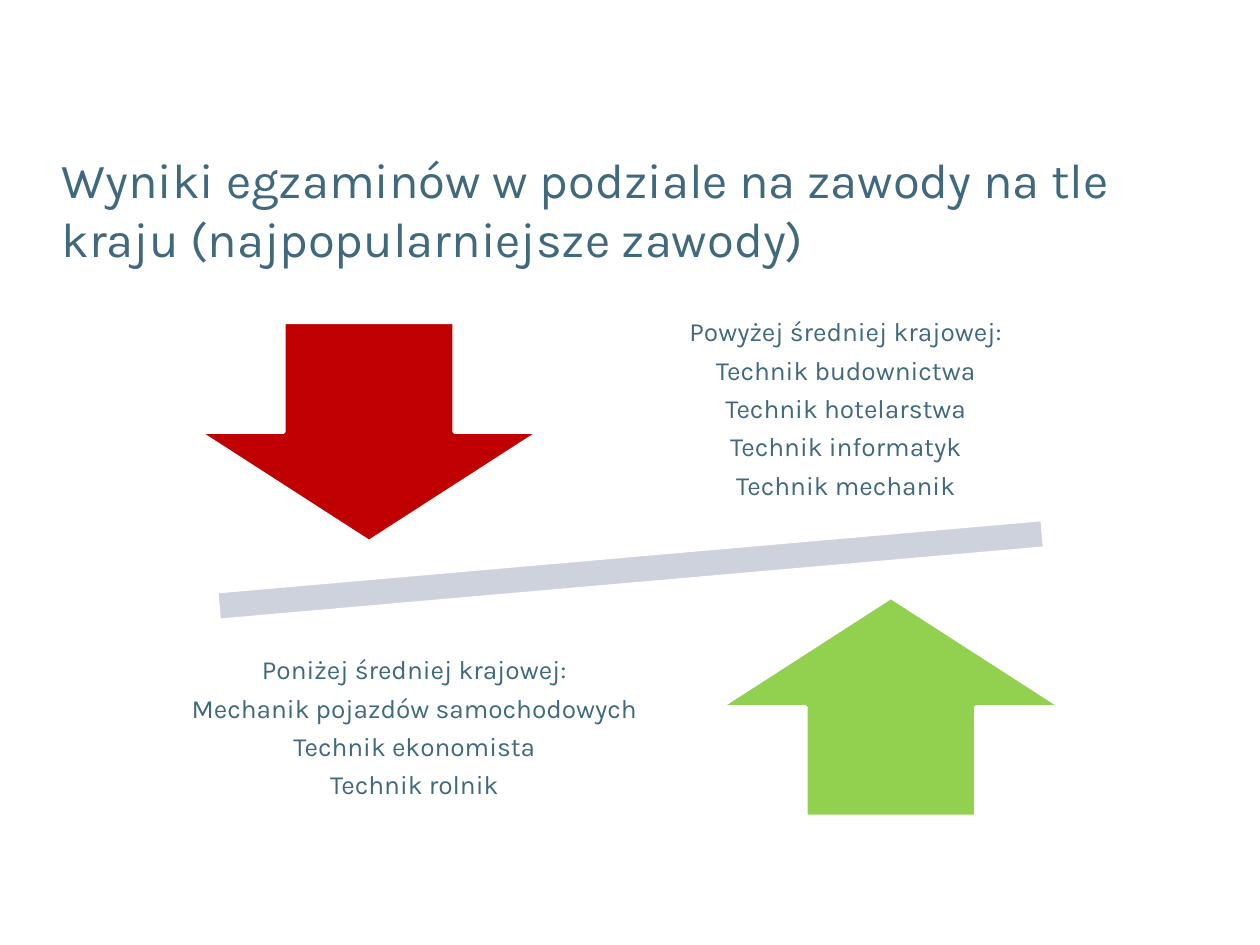
import pptx
import pptx.util
import pptx.dml.color
import pptx.enum.shapes
import pptx.enum.text

Cm, Pt = pptx.util.Cm, pptx.util.Pt
Shape = pptx.enum.shapes.MSO_SHAPE
Align = pptx.enum.text.PP_ALIGN
Anchor = pptx.enum.text.MSO_ANCHOR

COLORS = {"text": "40697D", "bar": "CED2DC", "below": "C00000",
          "above": "92D050", "outline": "FFFFFF"}
FONT = "Karla"
TITLE = "Wyniki egzaminów w podziale na zawody na tle kraju (najpopularniejsze zawody)"
TITLE_PLACE = (0.99, 2.97, 22.94, 2.54)
SHAPES = [
    (Shape.MATH_MINUS, "bar", (1.35, 10.26, 22.73, 2.46), 355),
    (Shape.DOWN_ARROW, "below", (4.01, 6.5, 6.86, 4.42), 0),
    (Shape.UP_ARROW, "above", (14.53, 12.04, 6.86, 4.42), 0),
]
LISTS = [
    ((13.39, 5.94, 7.32, 4.65),
     ["Powyżej średniej krajowej:", "Technik budownictwa", "Technik hotelarstwa",
      "Technik informatyk", "Technik mechanik"]),
    ((2.82, 12.37, 11.07, 4.65),
     ["Poniżej średniej krajowej:", "Mechanik pojazdów samochodowych",
      "Technik ekonomista", "Technik rolnik"]),
]
PARA_FORMAT = {"alignment": Align.CENTER, "line_spacing": 0.9,
               "space_before": Pt(0), "space_after": Pt(5.7)}
TITLE_FORMAT = {"alignment": Align.LEFT, "space_before": Pt(0)}
INSET = Cm(0.3)
LIST_FRAME = {"word_wrap": True, "vertical_anchor": Anchor.MIDDLE,
              "margin_left": INSET, "margin_right": INSET,
              "margin_top": INSET, "margin_bottom": INSET}
TITLE_FRAME = {"word_wrap": True, "vertical_anchor": Anchor.BOTTOM,
               "auto_size": pptx.enum.text.MSO_AUTO_SIZE.NONE}


def color(name):
    return pptx.dml.color.RGBColor.from_string(COLORS[name])


def apply(target, values):
    for name, value in values.items():
        setattr(target, name, value)


def place(box, position):
    apply(box, dict(zip(("left", "top", "width", "height"), map(Cm, position))))


def write(box, lines, size, frame_format, para_format):
    frame = box.text_frame
    apply(frame, frame_format)
    for index, line in enumerate(lines):
        para = frame.add_paragraph() if index else frame.paragraphs[0]
        apply(para, para_format)
        span = para.add_run()
        span.text = line
        apply(span.font, {"name": FONT, "size": Pt(size), "bold": False})
        span.font.color.rgb = color("text")


def main():
    deck = pptx.Presentation()
    deck.slide_width, deck.slide_height = Cm(25.4), Cm(19.05)
    page = deck.slides.add_slide(deck.slide_layouts[5])

    for preset, fill, position, rotation in SHAPES:
        shape = page.shapes.add_shape(preset, *map(Cm, position))
        shape.rotation = rotation
        shape.shadow.inherit = False
        shape.fill.solid()
        shape.fill.fore_color.rgb = color(fill)
        shape.line.color.rgb = color("outline")
        shape.line.width = Pt(2)

    for position, lines in LISTS:
        box = page.shapes.add_textbox(*map(Cm, position))
        write(box, lines, 15, LIST_FRAME, PARA_FORMAT)

    title = page.shapes.title
    place(title, TITLE_PLACE)
    write(title, [TITLE], 28, TITLE_FRAME, TITLE_FORMAT)

    deck.save("out.pptx")


if __name__ == "__main__":
    main()
